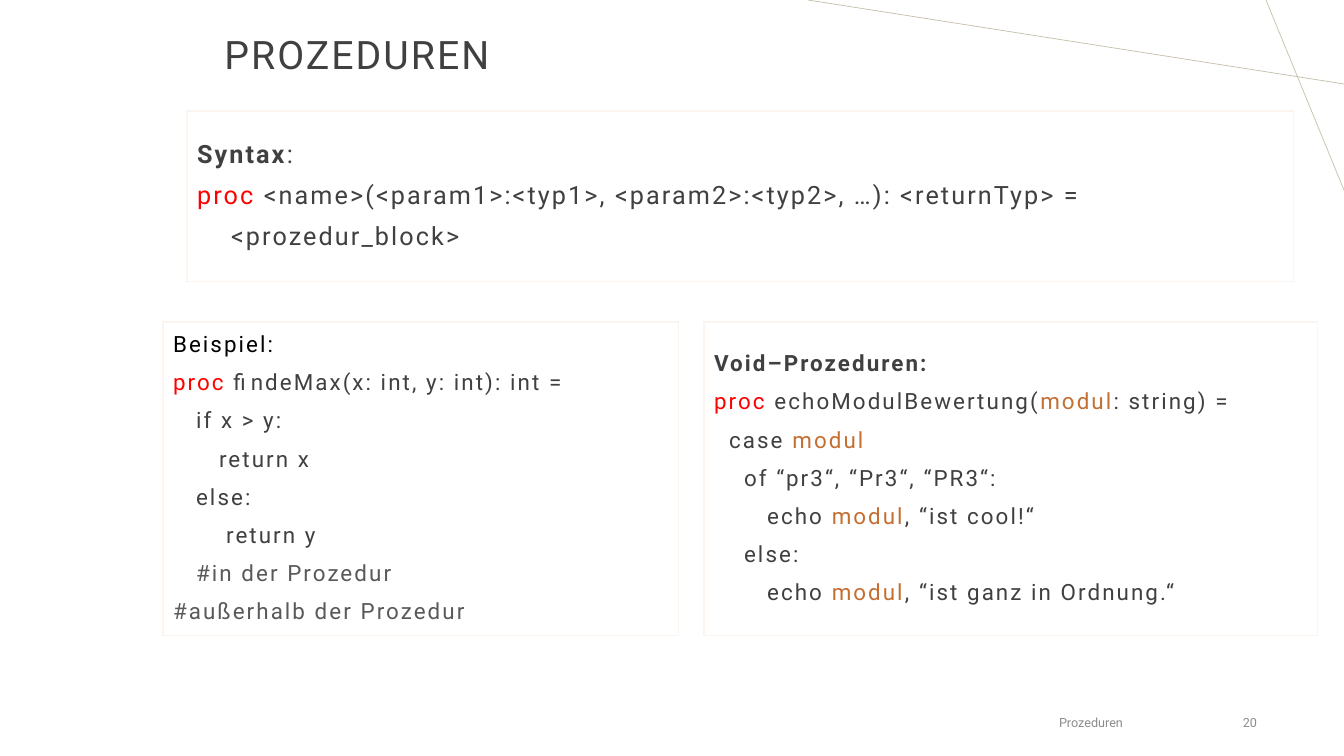
from lxml.etree import SubElement
from pptx import Presentation
from pptx.dml.color import RGBColor
from pptx.enum.shapes import MSO_CONNECTOR
from pptx.enum.text import MSO_ANCHOR, MSO_AUTO_SIZE, PP_ALIGN
from pptx.oxml.ns import qn
from pptx.util import Emu, Pt

EMU_PER_PX = 914400 / 100.8
FONT = "Roboto"
DARK, RED, BROWN = "404040", "FF0000", "C46E31"
COMMENT, BLACK, FOOTER = "595959", "000000", "8C8C8C"
RAY, BORDER = "C6BFA9", "FBF4EF"

SYNTAX = [
    (0, [("Syntax", DARK, True), (":", DARK)]),
    (0, [("proc", RED),
         (" <name>(<param1>:<typ1>, <param2>:<typ2>, …): <returnTyp> =", DARK)]),
    (34, [("<prozedur_block>", DARK)]),
]
EXAMPLE = [
    (0, [("Beispiel:", BLACK)]),
    (0, [("proc ", RED), ("findeMax(x: int, y: int): int =", DARK)]),
    (23, [("if x > y:", DARK)]),
    (46, [("return x", DARK)]),
    (23, [("else:", DARK)]),
    (53, [("return y", DARK)]),
    (23, [("#in der Prozedur", COMMENT)]),
    (0, [("#außerhalb der Prozedur", COMMENT)]),
]
VOID = [
    (0, [("Void–Prozeduren:", DARK, True)]),
    (0, [("proc ", RED), ("echoModulBewertung(", DARK), ("modul", BROWN),
         (": string) =", DARK)]),
    (15, [("case ", DARK), ("modul", BROWN)]),
    (30, [("of “pr3“, “Pr3“, “PR3“:", DARK)]),
    (53, [("echo ", DARK), ("modul", BROWN), (", “ist cool!“", DARK)]),
    (30, [("else:", DARK)]),
    (53, [("echo ", DARK), ("modul", BROWN), (", “ist ganz in Ordnung.“", DARK)]),
]


def px(n):
    """Turn px into EMU."""
    return Emu(round(n * EMU_PER_PX))


def rgb(color):
    """Turn a hex string into a colour."""
    return RGBColor.from_string(color)


def place(sp, box):
    """Move and size a shape."""
    sp.left, sp.top, sp.width, sp.height = map(px, box)


def set_frame(sp):
    """Centre the text vertically, wrap it and keep its size."""
    tf = sp.text_frame
    tf.word_wrap = True
    tf.auto_size = MSO_AUTO_SIZE.NONE
    tf.vertical_anchor = MSO_ANCHOR.MIDDLE
    return tf


def add_run(p, text, size, color, bold=False, spacing=150):
    """Add one formatted run."""
    r = p.add_run()
    r.text = text
    r.font.name = FONT
    r.font.size = Pt(size)
    r.font.bold = bold
    r.font.color.rgb = rgb(color)
    r.font._element.set("spc", str(spacing))


def add_ray(slide, start, end):
    """Draw a thin decorative line."""
    line = slide.shapes.add_connector(
        MSO_CONNECTOR.STRAIGHT, *map(px, start + end))
    line.line.color.rgb = rgb(RAY)
    line.line.width = Pt(0.5)
    SubElement(line._element.spPr, qn("a:effectLst"))


def fill_title(sp, text, box):
    """Place and write the title."""
    place(sp, box)
    p = set_frame(sp).paragraphs[0]
    p.alignment = PP_ALIGN.CENTER
    p.line_spacing = 0.9
    add_run(p, text, 28, DARK)


def fill_code(sp, lines, size, box):
    """Place a framed body and write its indented code lines."""
    place(sp, box)
    sp.line.color.rgb = rgb(BORDER)
    sp.line.width = Pt(0.75)
    tf = set_frame(sp)
    tf.margin_top = tf.margin_bottom = 0
    for i, (indent, runs) in enumerate(lines):
        p = tf.add_paragraph() if i else tf.paragraphs[0]
        p.line_spacing = 0.9
        p.space_before = Pt(10)
        pPr = p._p.get_or_add_pPr()
        pPr.set("marL", str(px(indent)))
        pPr.set("indent", "0")
        SubElement(pPr, qn("a:buNone"))
        for text, color, *bold in runs:
            add_run(p, text, size, color, bool(bold))


def add_footer(slide, text, align, box):
    """Add a small footer text."""
    sp = slide.shapes.add_textbox(*map(px, box))
    p = set_frame(sp).paragraphs[0]
    p.alignment = align
    add_run(p, text, 9, FOOTER, spacing=0)


def main():
    """Build the slide and save it."""
    prs = Presentation()
    prs.slide_width, prs.slide_height = px(1344), px(756)
    slide = prs.slides.add_slide(prs.slide_layouts.get_by_name("Comparison"))
    add_ray(slide, (1344, 84), (808, 0))
    add_ray(slide, (1266, 0), (1344, 190))
    title, syntax, void, example, spare = slide.placeholders
    fill_title(title, "PROZEDUREN", (-107, -16, 928, 146))
    fill_code(syntax, SYNTAX, 18, (187, 111, 1107, 171))
    fill_code(void, VOID, 16, (704, 322, 614, 314))
    fill_code(example, EXAMPLE, 16, (163, 322, 516, 314))
    spare._element.getparent().remove(spare._element)
    add_footer(slide, "Prozeduren", PP_ALIGN.CENTER, (864, 703, 454, 40))
    add_footer(slide, "20", PP_ALIGN.RIGHT, (965, 703, 302, 40))
    prs.save("out.pptx")


if __name__ == "__main__":
    main()
